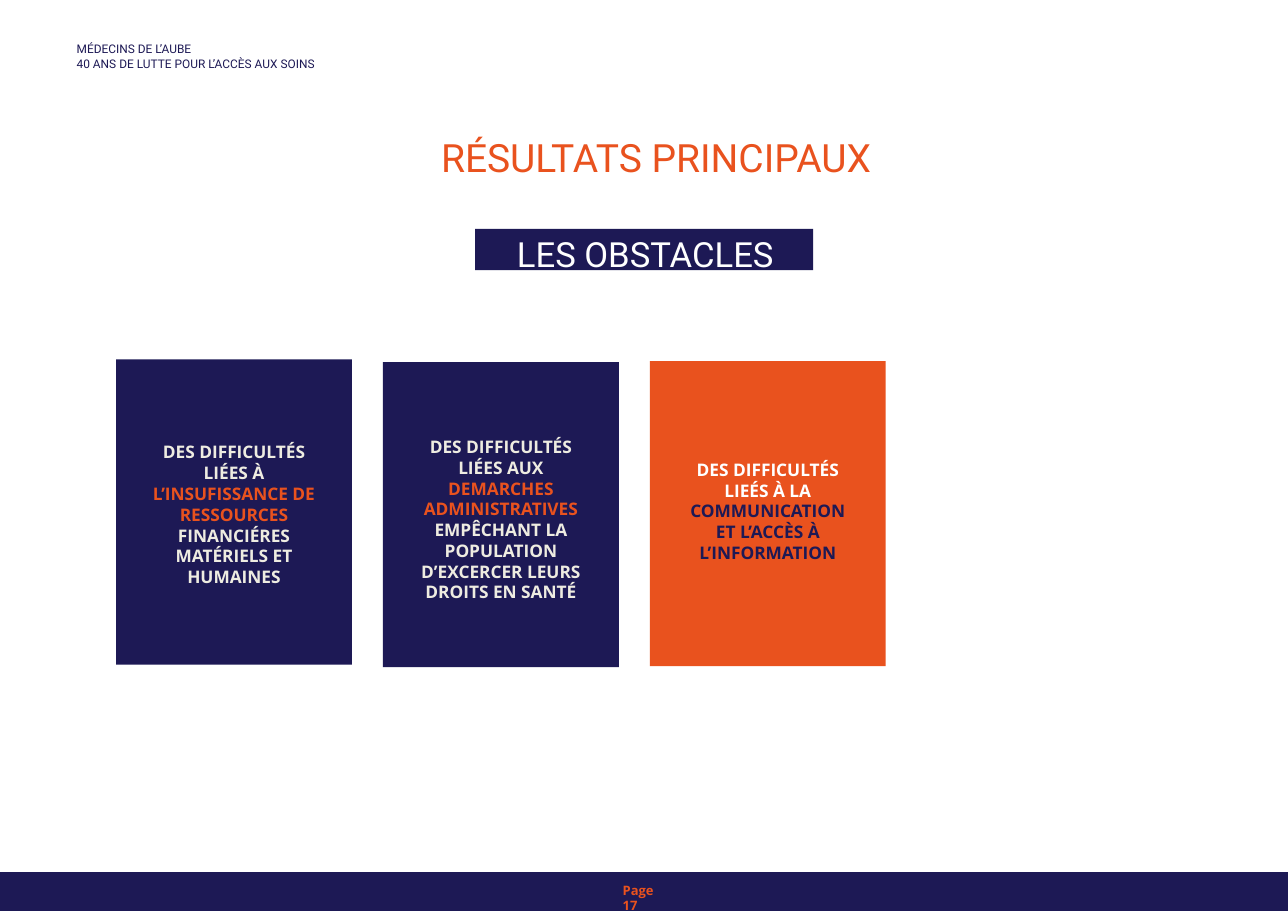
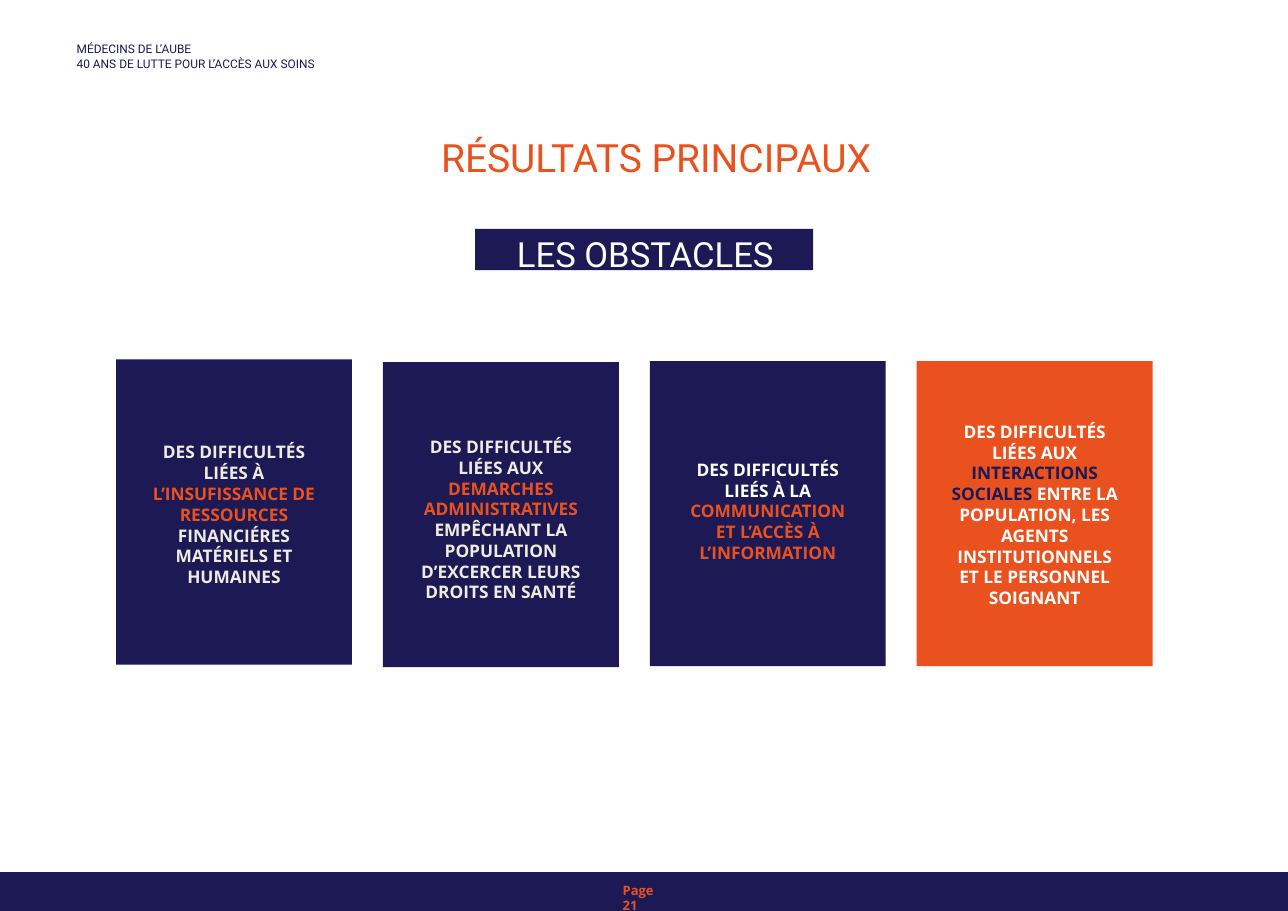
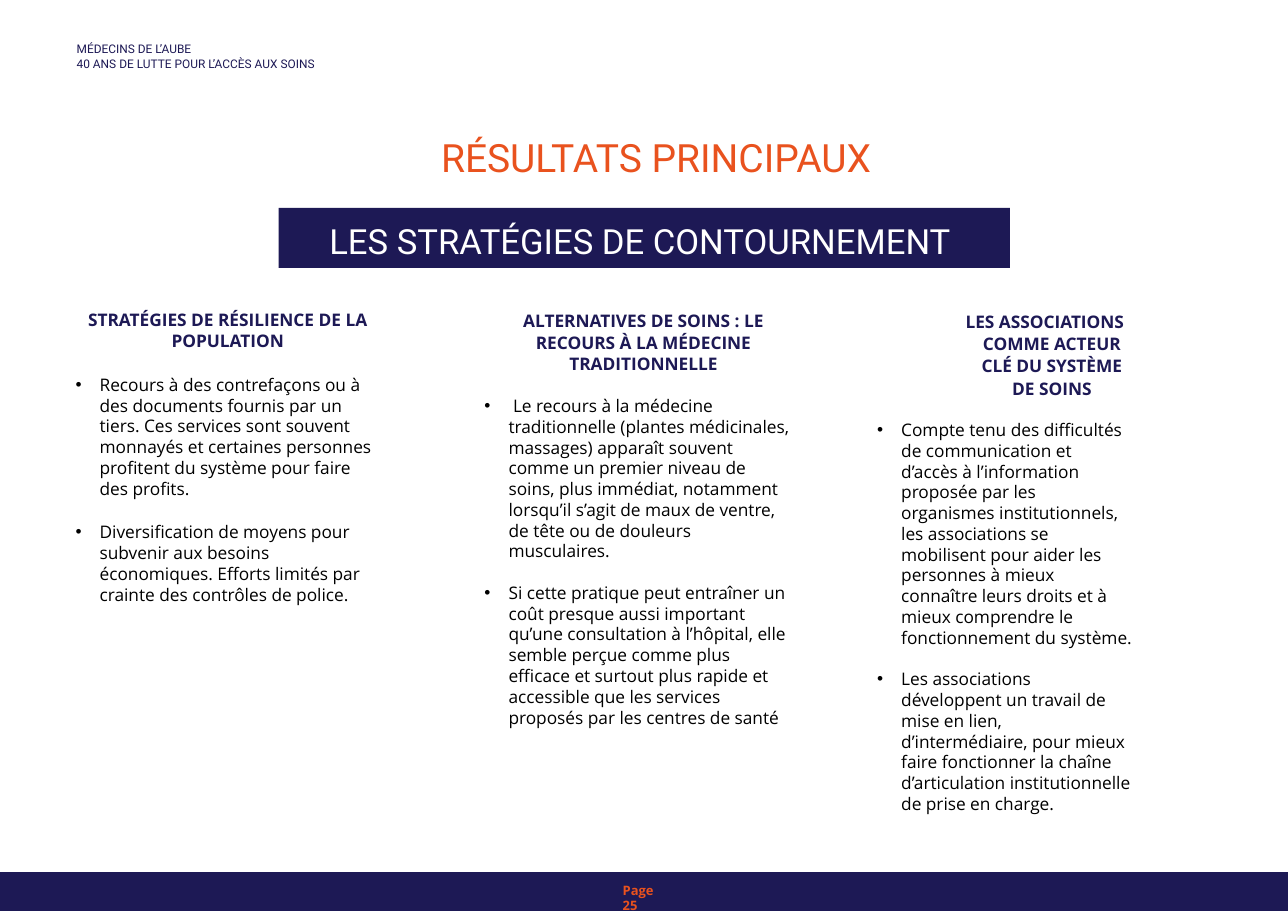
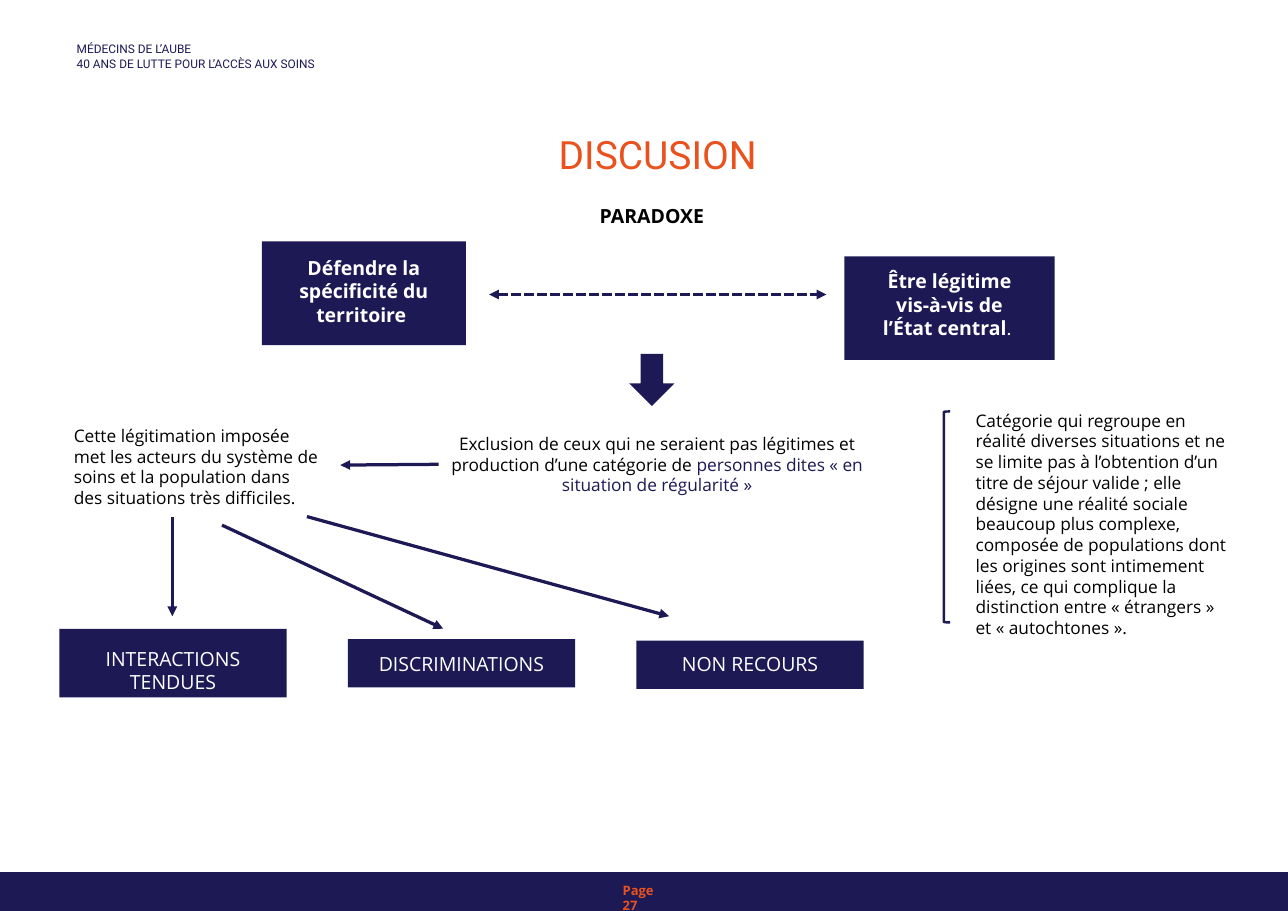
from dataclasses import dataclass

from lxml.etree import SubElement
from pptx import Presentation
from pptx.dml.color import RGBColor
from pptx.enum.dml import MSO_LINE
from pptx.enum.shapes import MSO_CONNECTOR, MSO_SHAPE
from pptx.enum.text import MSO_ANCHOR, MSO_AUTO_SIZE, PP_ALIGN
from pptx.oxml.ns import qn
from pptx.util import Pt

SLIDE_WIDTH, SLIDE_HEIGHT = 1190.55, 841.89
NAVY, ORANGE, WHITE, CREAM, BLACK = "1D1955", "E9521E", "FFFFFF", "EEECE1", "000000"
BODY_FONT, HEADING_FONT = "Open Sans", "Roboto"
TITLE_ONLY, COMPARISON = 5, 4

CARD_LEFT, CARD_PITCH, CARD_WIDTH, CARD_HEIGHT = 107.3, 246.7, 218, 282
BULLET_INDENT = 22.3


@dataclass
class Card:
    before: str
    accent: str
    after: str
    text_colour: str
    top: float
    text_top: float


CARDS = [
    Card("DES DIFFICULTÉS LIÉES À ", "L’INSUFISSANCE DE RESSOURCES ",
         "FINANCIÉRES MATÉRIELS ET HUMAINES", CREAM, 332.2, 76),
    Card("DES DIFFICULTÉS LIÉES AUX ", "DEMARCHES ADMINISTRATIVES ",
         "EMPÊCHANT LA POPULATION D’EXCERCER LEURS DROITS EN SANTÉ", CREAM, 334.7, 68.5),
    Card("DES DIFFICULTÉS LIEÉS À LA ", "COMMUNICATION ET L’ACCÈS À L’INFORMATION",
         "", WHITE, 333.7, 90.5),
    Card("DES DIFFICULTÉS LIÉES AUX ", "INTERACTIONS SOCIALES ",
         "ENTRE LA POPULATION, LES AGENTS INSTITUTIONNELS ET LE PERSONNEL SOIGNANT",
         WHITE, 333.7, 55.5),
]


@dataclass
class Strategy:
    heading: str
    items: list
    left: float
    width: float
    gap: float
    indent: float = 0
    first_line: float = 0
    line_spacing: float = 1.0


STRATEGIES = [
    Strategy("STRATÉGIES DE RÉSILIENCE DE LA POPULATION", [
        "Recours à des contrefaçons ou à des documents fournis par un tiers. Ces services "
        "sont souvent monnayés et certaines personnes profitent du système pour faire des "
        "profits.",
        "Diversification de moyens pour subvenir aux besoins économiques. Efforts limités "
        "par crainte des contrôles de police."],
        69.8, 281.5, 21.2),
    Strategy("ALTERNATIVES DE SOINS : LE RECOURS À LA MÉDECINE TRADITIONNELLE", [
        " Le recours à la médecine traditionnelle (plantes médicinales, massages) apparaît "
        "souvent comme un premier niveau de soins, plus immédiat, notamment lorsqu’il "
        "s’agit de maux de ventre, de tête ou de douleurs musculaires.",
        "Si cette pratique peut entraîner un coût presque aussi important qu’une "
        "consultation à l’hôpital, elle semble perçue comme plus efficace et surtout plus "
        "rapide et accessible que les services proposés par les centres de santé"],
        447.8, 285.5, 19.2, indent=8.5, line_spacing=1.04),
    Strategy("LES ASSOCIATIONS COMME ACTEUR CLÉ DU SYSTÈME DE SOINS", [
        "Compte tenu des difficultés de communication et d’accès à l’information proposée "
        "par les organismes institutionnels, les associations se mobilisent pour aider les "
        "personnes à mieux connaître leurs droits et à mieux comprendre le fonctionnement "
        "du système.",
        "Les associations développent un travail de mise en lien, d’intermédiaire, pour "
        "mieux faire fonctionner la chaîne d’articulation institutionnelle de prise en "
        "charge."],
        810.7, 236.2, 19.2, indent=87, first_line=-13, line_spacing=1.07),
]


def rgb(colour):
    return RGBColor.from_string(colour)


def place(shape, left, top, width, height):
    shape.left, shape.top = Pt(left), Pt(top)
    shape.width, shape.height = Pt(width), Pt(height)


def set_frame(frame, side=0, top=1):
    """Wrap the text and hang it from the top, with the given insets."""
    frame.word_wrap = True
    frame.auto_size = MSO_AUTO_SIZE.NONE
    frame.vertical_anchor = MSO_ANCHOR.TOP
    frame.margin_left = frame.margin_right = Pt(side)
    frame.margin_top, frame.margin_bottom = Pt(top), 0


def write(paragraph, parts, size, colour=BLACK, font=BODY_FONT, bold=False,
          align=PP_ALIGN.LEFT, before=0):
    """Fill a paragraph with a string, or with (text, colour) parts."""
    paragraph.alignment = align
    paragraph.space_before = Pt(before)
    style = paragraph.font
    style.name, style.size, style.bold = font, Pt(size), bold
    if isinstance(parts, str):
        style.color.rgb = rgb(colour)
        paragraph.add_run().text = parts
        return
    for text, part_colour in parts:
        if text:
            run = paragraph.add_run()
            run.text = text
            run.font.color.rgb = rgb(part_colour)


def add_text(slide, box, parts, size, side=7.2, top=3.6, **style):
    frame = slide.shapes.add_textbox(*map(Pt, box)).text_frame
    set_frame(frame, side, top)
    write(frame.paragraphs[0], parts, size, **style)
    return frame


def add_shape(slide, preset, box, fill=NAVY):
    shape = slide.shapes.add_shape(preset, *map(Pt, box))
    shape.shadow.inherit = False
    shape.fill.solid()
    shape.fill.fore_color.rgb = rgb(fill)
    shape.line.fill.background()
    return shape


def add_panel(slide, box, parts, size, side, top, fill=NAVY, **style):
    """Add a filled rectangle with centred text."""
    frame = add_shape(slide, MSO_SHAPE.RECTANGLE, box, fill).text_frame
    set_frame(frame, side, top)
    write(frame.paragraphs[0], parts, size, align=PP_ALIGN.CENTER, **style)
    return frame


def add_arrow(slide, start, end, both_ways=False):
    arrow = slide.shapes.add_connector(MSO_CONNECTOR.STRAIGHT, *map(Pt, start + end))
    arrow.line.color.rgb = rgb(NAVY)
    arrow.line.width = Pt(3)
    if both_ways:
        arrow.line.dash_style = MSO_LINE.SQUARE_DOT
    line = arrow.line._get_or_add_ln()
    for tip in ("a:headEnd", "a:tailEnd") if both_ways else ("a:tailEnd",):
        SubElement(line, qn(tip), type="triangle")
    SubElement(arrow._element.spPr, qn("a:effectLst"))


def set_indent(paragraph, left, first_line, bullet=None):
    properties = paragraph._p.get_or_add_pPr()
    properties.set("marL", str(Pt(left)))
    properties.set("indent", str(Pt(first_line)))
    if bullet:
        SubElement(properties, qn("a:buFont"), typeface="Arial")
        SubElement(properties, qn("a:buChar"), char=bullet)
    else:
        SubElement(properties, qn("a:buNone"))


def new_slide(deck, title, page, layout=TITLE_ONLY, title_box=(90, 122.4, 1033, 44.6)):
    """Add a slide with the shared header, title and footer."""
    slide = deck.slides.add_slide(deck.slide_layouts[layout])
    heading = slide.shapes.title
    place(heading, *title_box)
    set_frame(heading.text_frame)
    write(heading.text_frame.paragraphs[0], title, 36, colour=ORANGE, font=HEADING_FONT,
          align=PP_ALIGN.CENTER, before=1)

    header_style = dict(size=11, colour=NAVY, font=HEADING_FONT, before=1)
    header = add_text(slide, (70.8, 37.4, 234, 29), "MÉDECINS DE L’AUBE",
                      side=0, top=1, **header_style)
    write(header.add_paragraph(), "40 ANS DE LUTTE POUR L’ACCÈS AUX SOINS", **header_style)

    add_shape(slide, MSO_SHAPE.RECTANGLE, (0, 805.89, SLIDE_WIDTH, 36))
    add_text(slide, (575.6, 813.2, 43, 16.6), f"Page {page}", 12, side=0, top=2,
             colour=ORANGE, bold=True, before=1.8)
    return slide


def add_band(slide, box, text, top, right=7.2):
    frame = add_panel(slide, box, text, 32, 7.2, top, colour=WHITE, font=HEADING_FONT)
    frame.margin_right = Pt(right)


def obstacles_slide(deck, page, count):
    """Show the first cards, with the last of them highlighted."""
    slide = new_slide(deck, "RÉSULTATS PRINCIPAUX", page)
    add_band(slide, (439.2, 211.5, 312.5, 38.2), "LES OBSTACLES", 3.6, right=4.8)
    for index, card in enumerate(CARDS[:count]):
        fill, accent = (ORANGE, NAVY) if index == count - 1 else (NAVY, ORANGE)
        box = (CARD_LEFT + index * CARD_PITCH, card.top, CARD_WIDTH, CARD_HEIGHT)
        parts = [(card.before, card.text_colour), (card.accent, accent),
                 (card.after, card.text_colour)]
        add_panel(slide, box, parts, 16, 28.3, card.text_top, fill, bold=True, before=1)


def strategies_slide(deck):
    slide = new_slide(deck, "RÉSULTATS PRINCIPAUX", 25, COMPARISON)
    add_band(slide, (257.5, 192.2, 676, 55.5), "LES STRATÉGIES DE CONTOURNEMENT", 10.8,
             right=14.4)
    _, *columns, spare = slide.placeholders
    spare._element.getparent().remove(spare._element)
    for column, strategy in zip(columns, STRATEGIES):
        place(column, strategy.left, 285.2, strategy.width, 480)
        frame = column.text_frame
        set_frame(frame)
        heading = frame.paragraphs[0]
        set_indent(heading, strategy.indent, strategy.first_line)
        heading.line_spacing = strategy.line_spacing
        write(heading, strategy.heading, 16, colour=NAVY, bold=True,
              align=PP_ALIGN.CENTER, before=1)
        for item in strategy.items:
            paragraph = frame.add_paragraph()
            set_indent(paragraph, BULLET_INDENT, -BULLET_INDENT, "•")
            write(paragraph, item, 16, before=strategy.gap)


def discussion_slide(deck):
    slide = new_slide(deck, "DISCUSION", 27, title_box=(91.5, 119.5, 1033, 44.6))
    add_text(slide, (509, 185, 187.2, 28.8), "PARADOXE", 18, bold=True,
             align=PP_ALIGN.CENTER)
    add_panel(slide, (242, 223.2, 188.6, 95.8), "Défendre la spécificité du territoire ",
              18, 22, 13.5, colour=WHITE, bold=True)
    state = add_panel(slide, (780.5, 236.9, 194.4, 95.8),
                      [("Être légitime vis-à-vis de l’État central", WHITE), (". ", WHITE)],
                      18, 24.5, 12, bold=True)
    full_stop = state.paragraphs[0].runs[1].font
    full_stop.name, full_stop.bold = "Calibri", False
    add_arrow(slide, (452.2, 272.2), (763.9, 272.2), both_ways=True)
    add_shape(slide, MSO_SHAPE.DOWN_ARROW, (581.6, 327.1, 41.8, 48.2))

    add_text(slide, (405.4, 396.7, 404, 65.5),
             [("Exclusion de ceux qui ne seraient pas légitimes et production d’une "
               "catégorie de ", BLACK),
              ("personnes dites « en situation de régularité »", NAVY)],
             16, align=PP_ALIGN.CENTER)
    add_text(slide, (894.7, 375.2, 252.7, 220.3),
             "Catégorie qui regroupe en réalité diverses situations et ne se limite pas à "
             "l’obtention d’un titre de séjour valide ; elle désigne une réalité sociale "
             "beaucoup plus complexe, composée de populations dont les origines sont "
             "intimement liées, ce qui complique la distinction entre « étrangers » et "
             "« autochtones ».", 16)
    bracket = add_shape(slide, MSO_SHAPE.LEFT_BRACKET, (872.4, 380.2, 5.8, 195))
    bracket.fill.background()
    bracket.line.color.rgb = rgb(NAVY)
    bracket.line.width = Pt(2.25)
    add_text(slide, (61.2, 389.2, 244, 85),
             "Cette légitimation imposée met les acteurs du système de soins et la "
             "population dans des situations très difficiles.", 16)
    add_arrow(slide, (405.4, 429.1), (314.6, 429.8))

    consequences = [
        ("INTERACTIONS TENDUES", 581.2, 63.4, 16.6, (159.3, 477.6), (159.3, 569.5)),
        ("DISCRIMINATIONS", 590.6, 44.6, 12.2, (205.2, 485.3), (409.7, 581)),
        ("NON RECOURS", 592, 44.6, 10.8, (283.7, 477.4), (618.5, 569.5)),
    ]
    for index, (label, top, height, text_top, start, end) in enumerate(consequences):
        add_panel(slide, (54.8 + index * 266.7, top, 210.2, height), label, 18, 17.6,
                  text_top, colour=WHITE)
        add_arrow(slide, start, end)


def main():
    deck = Presentation()
    deck.slide_width, deck.slide_height = Pt(SLIDE_WIDTH), Pt(SLIDE_HEIGHT)
    obstacles_slide(deck, 17, 3)
    obstacles_slide(deck, 21, 4)
    strategies_slide(deck)
    discussion_slide(deck)
    deck.save("out.pptx")


if __name__ == "__main__":
    main()
